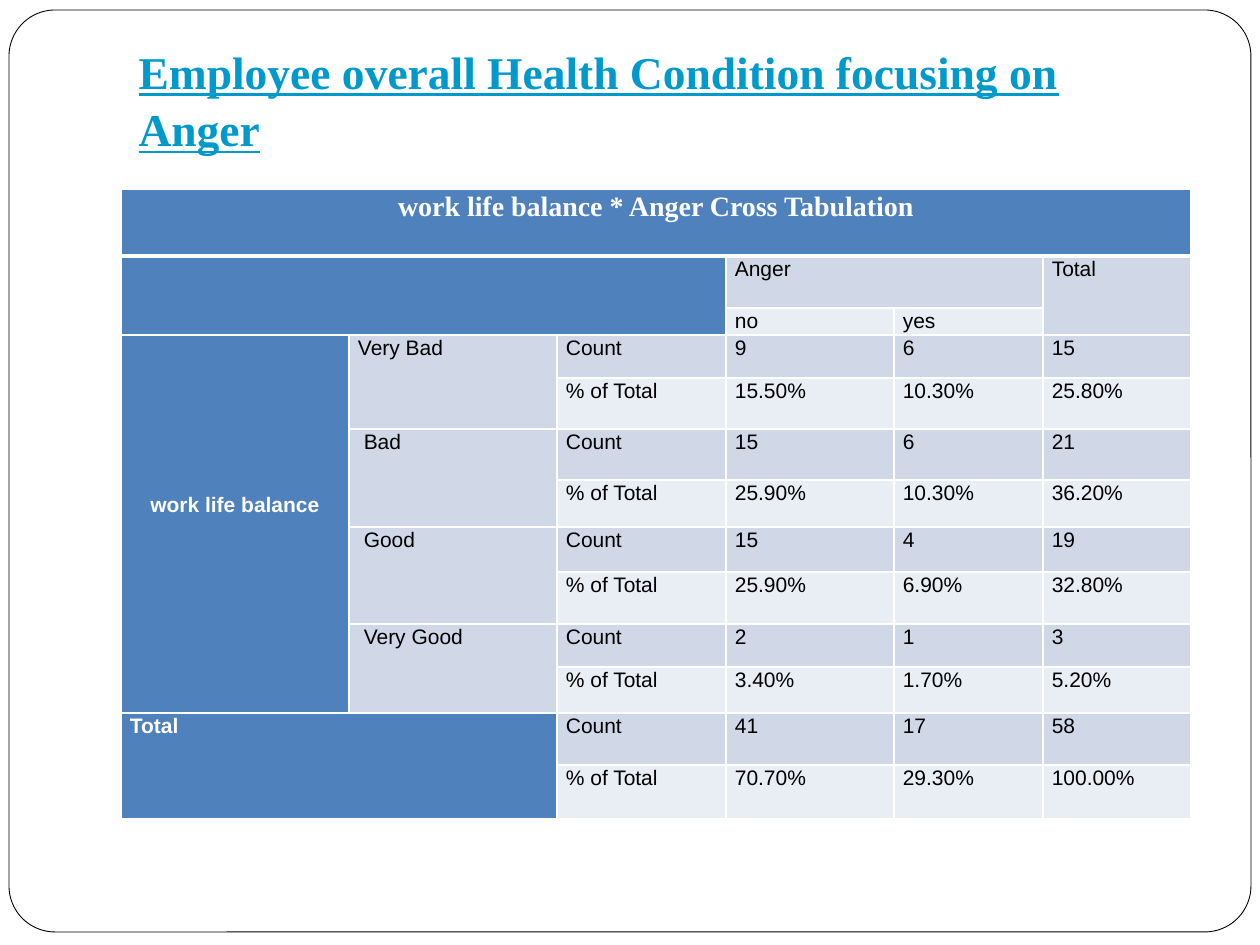
from lxml.etree import SubElement
from pptx import Presentation
from pptx.dml.color import RGBColor
from pptx.enum.shapes import MSO_SHAPE
from pptx.enum.text import MSO_ANCHOR, PP_ALIGN
from pptx.oxml.ns import qn
from pptx.util import Emu, Pt

PX = 914400 // 126
COLORS = {"white": "FFFFFF", "black": "000000", "title": "0099CC",
          "header": "4F81BD", "dark_band": "D0D8E8", "light_band": "E9EDF4"}

COLUMN_WIDTHS = [228, 208, 169, 168, 149, 148]
ROW_HEIGHTS = [67, 52, 27, 43, 51, 51, 47, 45, 52, 43, 46, 52, 54]
# Each group: label, counts and percentages for no, yes and total
GROUPS = [
    ("Very Bad", ["9", "6", "15"], ["15.50%", "10.30%", "25.80%"]),
    (" Bad", ["15", "6", "21"], ["25.90%", "10.30%", "36.20%"]),
    (" Good", ["15", "4", "19"], ["25.90%", "6.90%", "32.80%"]),
    (" Very Good", ["2", "1", "3"], ["3.40%", "1.70%", "5.20%"]),
    ("Total", ["41", "17", "58"], ["70.70%", "29.30%", "100.00%"]),
]


def px(value):
    return Emu(value * PX)


def rgb(name):
    return RGBColor.from_string(COLORS[name])


class SlideBuilder:
    def __init__(self, slide):
        self.slide = slide

    def style_font(self, font, size, color, name="Arial", bold=False):
        font.size, font.name, font.bold = Pt(size), name, bold
        font.color.rgb = rgb(color)

    def frame(self, left, top, width, height):
        shape = self.slide.shapes.add_shape(
            MSO_SHAPE.ROUNDED_RECTANGLE, px(left), px(top), px(width), px(height))
        shape.adjustments[0] = 0.05
        shape.shadow.inherit = False
        shape.fill.solid()
        shape.fill.fore_color.rgb = rgb("white")
        shape.line.color.rgb = rgb("black")
        shape.line.width = Pt(0.5)

    def title(self, text, left, top, width, height):
        """Fill the title placeholder and bring it in front of the frame."""
        title = self.slide.shapes.title
        title.left, title.top, title.width, title.height = map(
            px, (left, top, width, height))
        title.text_frame.text = text
        title.text_frame.vertical_anchor = MSO_ANCHOR.MIDDLE
        paragraph = title.text_frame.paragraphs[0]
        paragraph.alignment = PP_ALIGN.LEFT
        paragraph.line_spacing = 1.05
        self.style_font(paragraph.font, 26, "title", "Times New Roman", True)
        paragraph.font.underline = True
        title.element.getparent().append(title.element)

    def table(self, left, top, column_widths, row_heights):
        table = self.slide.shapes.add_table(
            len(row_heights), len(column_widths), px(left), px(top),
            px(sum(column_widths)), px(sum(row_heights))).table
        table.first_row = table.horz_banding = False
        for column, width in zip(table.columns, column_widths):
            column.width = px(width)
        for row, height in zip(table.rows, row_heights):
            row.height = px(height)
        for row in range(len(row_heights)):
            for column in range(len(column_widths)):
                self.cell(table, row, column, "", "header")
                self.borders(table.cell(row, column),
                             top=3 if row == 1 else 1,
                             bottom=3 if row == 0 else 1)
        return table

    def borders(self, cell, top, bottom):
        properties = cell._tc.get_or_add_tcPr()
        widths = {"a:lnL": 1, "a:lnR": 1, "a:lnT": top, "a:lnB": bottom}
        for position, (tag, width) in enumerate(widths.items()):
            line = SubElement(properties, qn(tag), w=str(Pt(width)))
            fill = SubElement(line, qn("a:solidFill"))
            SubElement(fill, qn("a:srgbClr"), val=COLORS["white"])
            properties.insert(position, line)

    def cell(self, table, row, column, text, fill, rows=1, columns=1,
             align=PP_ALIGN.JUSTIFY, size=12, name="Arial", margin_top=0):
        cell = table.cell(row, column)
        if rows * columns > 1:
            cell.merge(table.cell(row + rows - 1, column + columns - 1))
        cell.fill.solid()
        cell.fill.fore_color.rgb = rgb(fill)
        cell.margin_left = cell.margin_right = px(9)
        cell.margin_top, cell.margin_bottom = px(margin_top), 0
        cell.text = text
        paragraph = cell.text_frame.paragraphs[0]
        paragraph.alignment = align
        paragraph.line_spacing = 1.07
        paragraph.space_after = Pt(8)
        is_header = fill == "header"
        self.style_font(paragraph.font, size, "white" if is_header else "black",
                        name, is_header)


def main():
    presentation = Presentation()
    presentation.slide_width, presentation.slide_height = px(1260), px(945)
    builder = SlideBuilder(
        presentation.slides.add_slide(presentation.slide_layouts[5]))
    builder.frame(9, 10, 1242, 922)

    table = builder.table(121, 189, COLUMN_WIDTHS, ROW_HEIGHTS)
    builder.cell(table, 0, 0, "work life balance * Anger Cross Tabulation",
                 "header", columns=6, align=PP_ALIGN.CENTER, size=16,
                 name="Times New Roman")
    builder.cell(table, 1, 0, "", "header", rows=2, columns=3)
    builder.cell(table, 1, 3, "Anger", "dark_band", columns=2)
    builder.cell(table, 1, 5, "Total", "dark_band", rows=2)
    builder.cell(table, 2, 3, "no", "light_band")
    builder.cell(table, 2, 4, "yes", "light_band")
    builder.cell(table, 3, 0, "work life balance", "header", rows=8,
                 align=PP_ALIGN.CENTER, margin_top=157)

    for index, (label, counts, percentages) in enumerate(GROUPS):
        row = 3 + 2 * index
        if label == "Total":
            builder.cell(table, row, 0, label, "header", rows=2, columns=2)
        else:
            builder.cell(table, row, 1, label, "dark_band", rows=2)
        measures = [["Count", *counts], ["% of Total", *percentages]]
        for offset, (values, fill) in enumerate(
                zip(measures, ["dark_band", "light_band"])):
            for column, value in enumerate(values, start=2):
                builder.cell(table, row + offset, column, value, fill)

    builder.title("Employee overall Health Condition focusing on Anger",
                  126, 37, 1071, 123)
    presentation.save("out.pptx")


if __name__ == "__main__":
    main()
